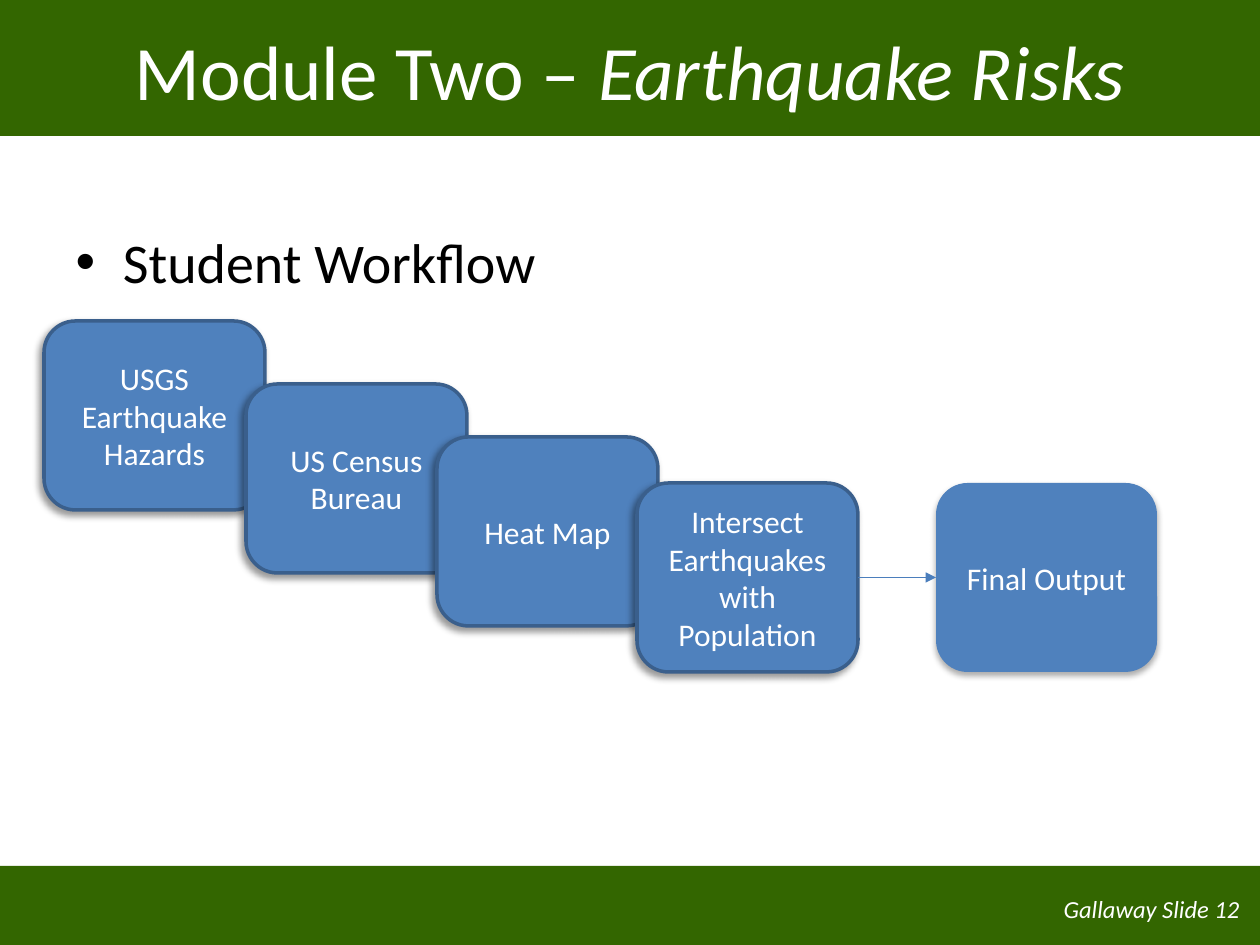
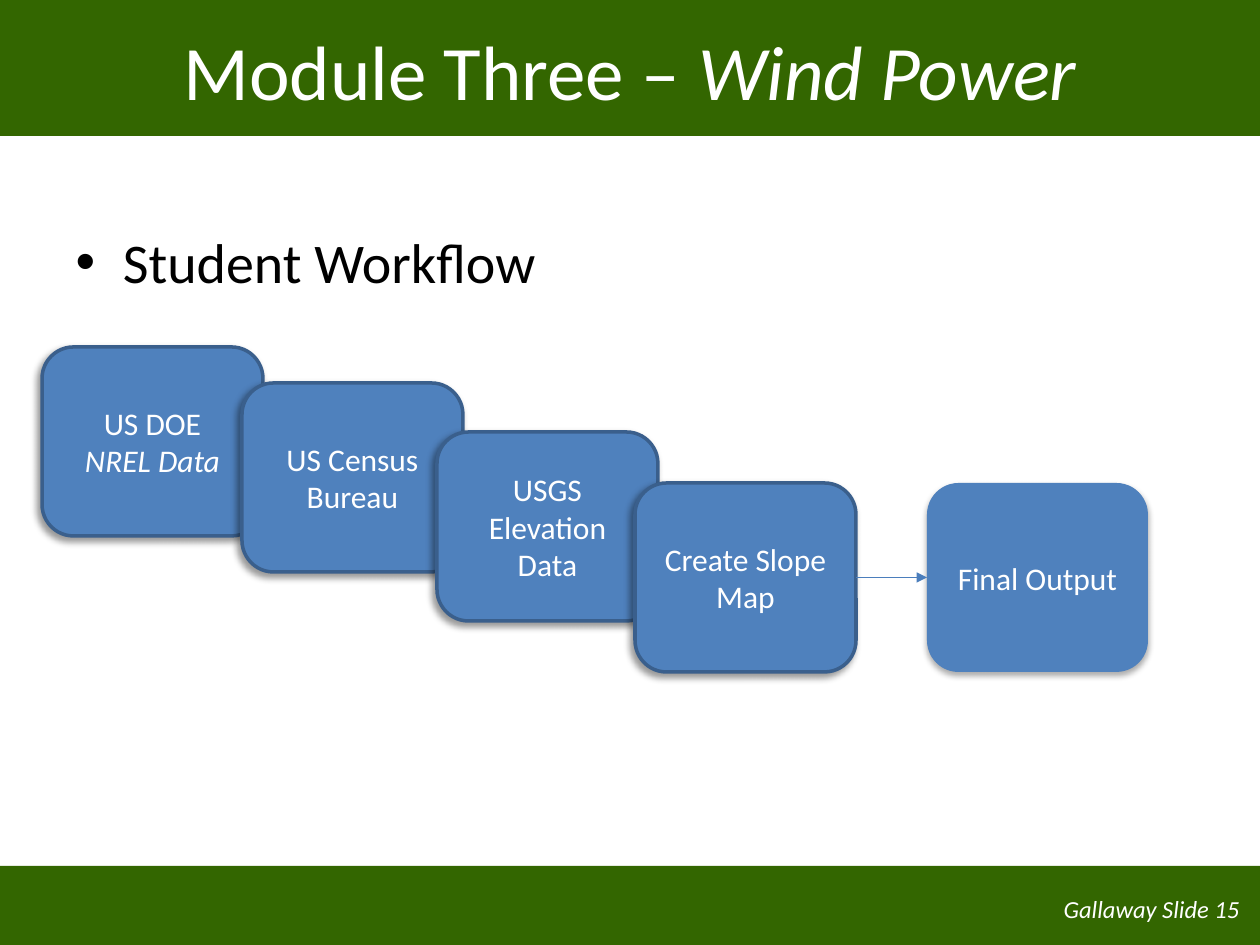
from lxml import etree
from pptx import Presentation
from pptx.dml.color import RGBColor
from pptx.enum.shapes import MSO_CONNECTOR, MSO_SHAPE
from pptx.enum.text import MSO_ANCHOR, MSO_AUTO_SIZE, PP_ALIGN
from pptx.oxml.ns import qn
from pptx.util import Pt

RECTANGLE = MSO_SHAPE.RECTANGLE
ROUNDED = MSO_SHAPE.ROUNDED_RECTANGLE
STRAIGHT = MSO_CONNECTOR.STRAIGHT
LEFT, CENTER, RIGHT = PP_ALIGN.LEFT, PP_ALIGN.CENTER, PP_ALIGN.RIGHT
MIDDLE = MSO_ANCHOR.MIDDLE
FIT_SHAPE = MSO_AUTO_SIZE.SHAPE_TO_FIT_TEXT

PX_PER_INCH = 126
SLIDE_WIDTH, SLIDE_HEIGHT = 1260, 945
HEADER_HEIGHT, FOOTER_TOP = 136, 866
BOX_WIDTH, BOX_HEIGHT = 221, 189
OUTPUT_TOP = 483
FONT = "Calibri"
COLORS = {
    "band": "336600",
    "box": "4F81BD",
    "box_line": "3A5F8C",
    "arrow": "4B7EBC",
    "shadow": "000000",
    "text": "000000",
    "light": "FFFFFF",
}
STEP_SHADOW = {"blur": 4, "distance": 3, "angle": 135, "opacity": 40}
OUTPUT_SHADOW = {"blur": 3.5, "distance": 2.2, "angle": 90, "opacity": 32}

WORKFLOWS = [
    {
        "title": ("Module Two – ", "Earthquake Risks"),
        "number": 12,
        "steps": [
            (44, 321, "USGS Earthquake Hazards", ""),
            (246, 384, "US Census Bureau", ""),
            (437, 437, "Heat Map", ""),
            (637, 483, "Intersect Earthquakes with Population", ""),
        ],
        "output_left": 936,
    },
    {
        "title": ("Module Three – ", "Wind Power"),
        "number": 15,
        "steps": [
            (42, 347, "US DOE", "NREL Data"),
            (242, 383, "US Census Bureau", ""),
            (437, 432, "USGS Elevation Data", ""),
            (635, 483, "Create Slope Map", ""),
        ],
        "output_left": 927,
    },
]


def px(length):
    return round(length * 914400 / PX_PER_INCH)


def color(name):
    return RGBColor.from_string(COLORS[name])


def place(shape, left, top, width, height):
    shape.left, shape.top = px(left), px(top)
    shape.width, shape.height = px(width), px(height)


def write(paragraph, text, size=18, fill="light", italic=False, align=CENTER):
    paragraph.alignment = align
    run = paragraph.add_run()
    run.text = text
    run.font.name = FONT
    run.font.size = Pt(size)
    run.font.italic = italic
    run.font.color.rgb = color(fill)


def add_filled(slide, preset, left, top, width, height, fill):
    shape = slide.shapes.add_shape(
        preset, px(left), px(top), px(width), px(height))
    shape.shadow.inherit = False
    shape.fill.solid()
    shape.fill.fore_color.rgb = color(fill)
    shape.line.fill.background()
    return shape


def add_band(slide, top, height):
    band = add_filled(slide, RECTANGLE, 0, top, SLIDE_WIDTH, height, "band")
    slide.shapes._spTree.insert(2, band._element)


def add_shadow(shape, blur, distance, angle, opacity):
    effects = shape._element.spPr.find(qn("a:effectLst"))
    shadow = etree.SubElement(
        effects, qn("a:outerShdw"), blurRad=str(Pt(blur)),
        dist=str(Pt(distance)), dir=str(angle * 60000), rotWithShape="0")
    shade = etree.SubElement(shadow, qn("a:srgbClr"), val=COLORS["shadow"])
    etree.SubElement(shade, qn("a:alpha"), val=str(opacity * 1000))


def add_box(slide, left, top, text, shadow, detail="", outlined=False):
    box = add_filled(slide, ROUNDED, left, top, BOX_WIDTH, BOX_HEIGHT, "box")
    add_shadow(box, **shadow)
    if outlined:
        box.line.color.rgb = color("box_line")
        box.line.width = Pt(2)
    frame = box.text_frame
    frame.word_wrap = True
    frame.vertical_anchor = MIDDLE
    write(frame.paragraphs[0], text)
    if detail:
        write(frame.add_paragraph(), detail, italic=True)
    return box


def add_arrow(slide, source, target):
    arrow = slide.shapes.add_connector(STRAIGHT, 0, 0, 0, 0)
    arrow.begin_connect(source, 3)
    arrow.end_connect(target, 1)
    arrow.line.color.rgb = color("arrow")
    arrow.line.width = Pt(0.75)
    etree.SubElement(arrow.line._get_or_add_ln(), qn("a:tailEnd"),
                     type="triangle")
    etree.SubElement(arrow._element.spPr, qn("a:effectLst"))


def add_footer(slide, number):
    footer = slide.shapes.add_textbox(px(1045), px(888), px(207), px(43))
    frame = footer.text_frame
    frame.word_wrap = False
    frame.auto_size = FIT_SHAPE
    write(frame.paragraphs[0], f"Gallaway Slide {number}",
          size=14, italic=True, align=RIGHT)


def fill_placeholders(slide, title_parts):
    title, body = slide.placeholders
    place(title, 63, -9, 1134, 158)
    title.text_frame.vertical_anchor = MIDDLE
    heading = title.text_frame.paragraphs[0]
    plain, emphasis = title_parts
    write(heading, plain, size=44)
    write(heading, emphasis, size=44, italic=True)
    place(body, 63, 221, 1134, 624)
    write(body.text_frame.paragraphs[0], "Student Workflow",
          size=32, fill="text", align=LEFT)


def build_slide(presentation, workflow):
    slide = presentation.slides.add_slide(presentation.slide_layouts[1])
    add_band(slide, 0, HEADER_HEIGHT)
    add_band(slide, FOOTER_TOP, SLIDE_HEIGHT - FOOTER_TOP)
    add_footer(slide, workflow["number"])
    fill_placeholders(slide, workflow["title"])
    steps = [add_box(slide, left, top, text, STEP_SHADOW, detail, outlined=True)
             for left, top, text, detail in workflow["steps"]]
    output = add_box(slide, workflow["output_left"], OUTPUT_TOP,
                     "Final Output", OUTPUT_SHADOW)
    add_arrow(slide, steps[-1], output)


def main():
    presentation = Presentation()
    presentation.slide_width = px(SLIDE_WIDTH)
    presentation.slide_height = px(SLIDE_HEIGHT)
    for workflow in WORKFLOWS:
        build_slide(presentation, workflow)
    presentation.save("out.pptx")


if __name__ == "__main__":
    main()
